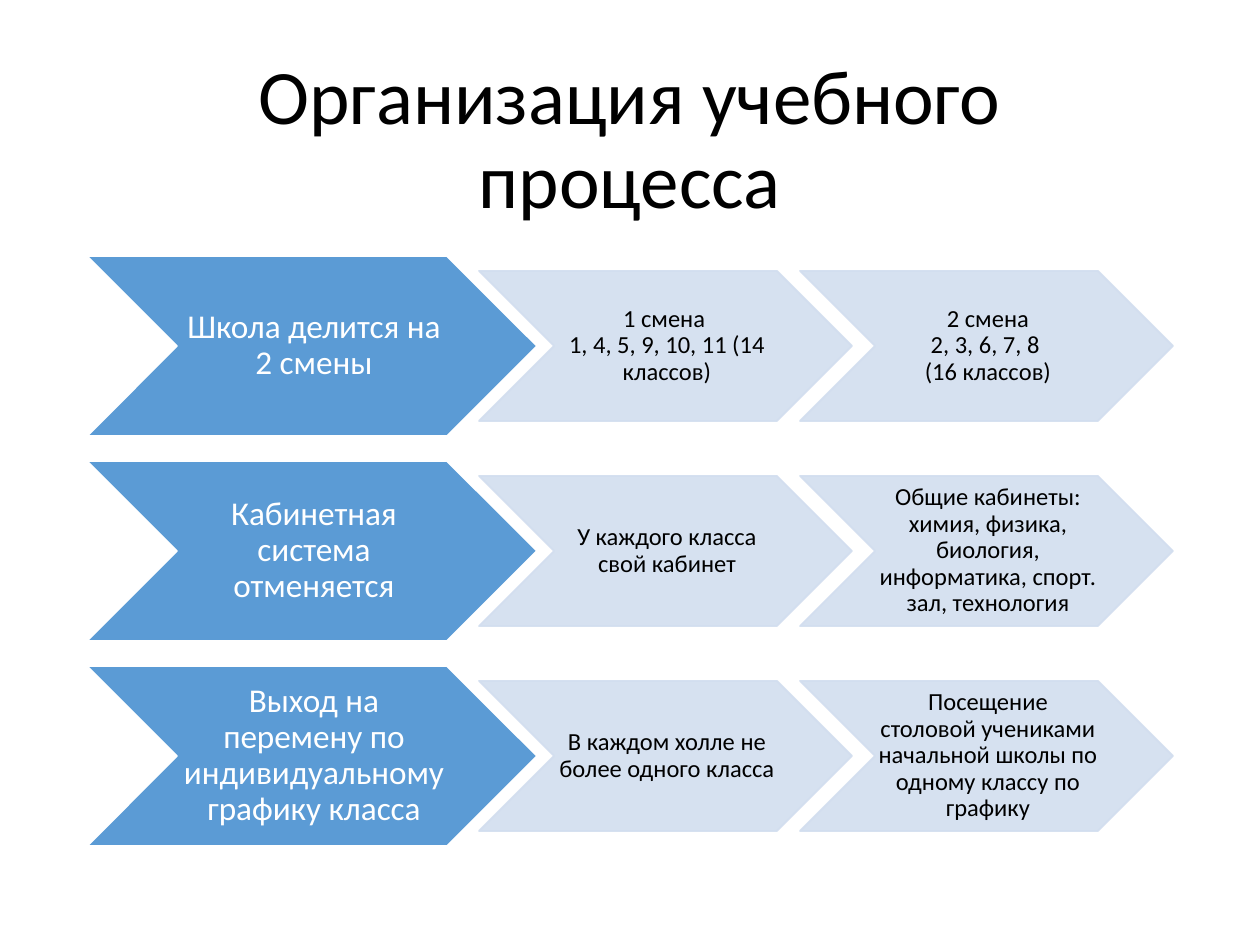
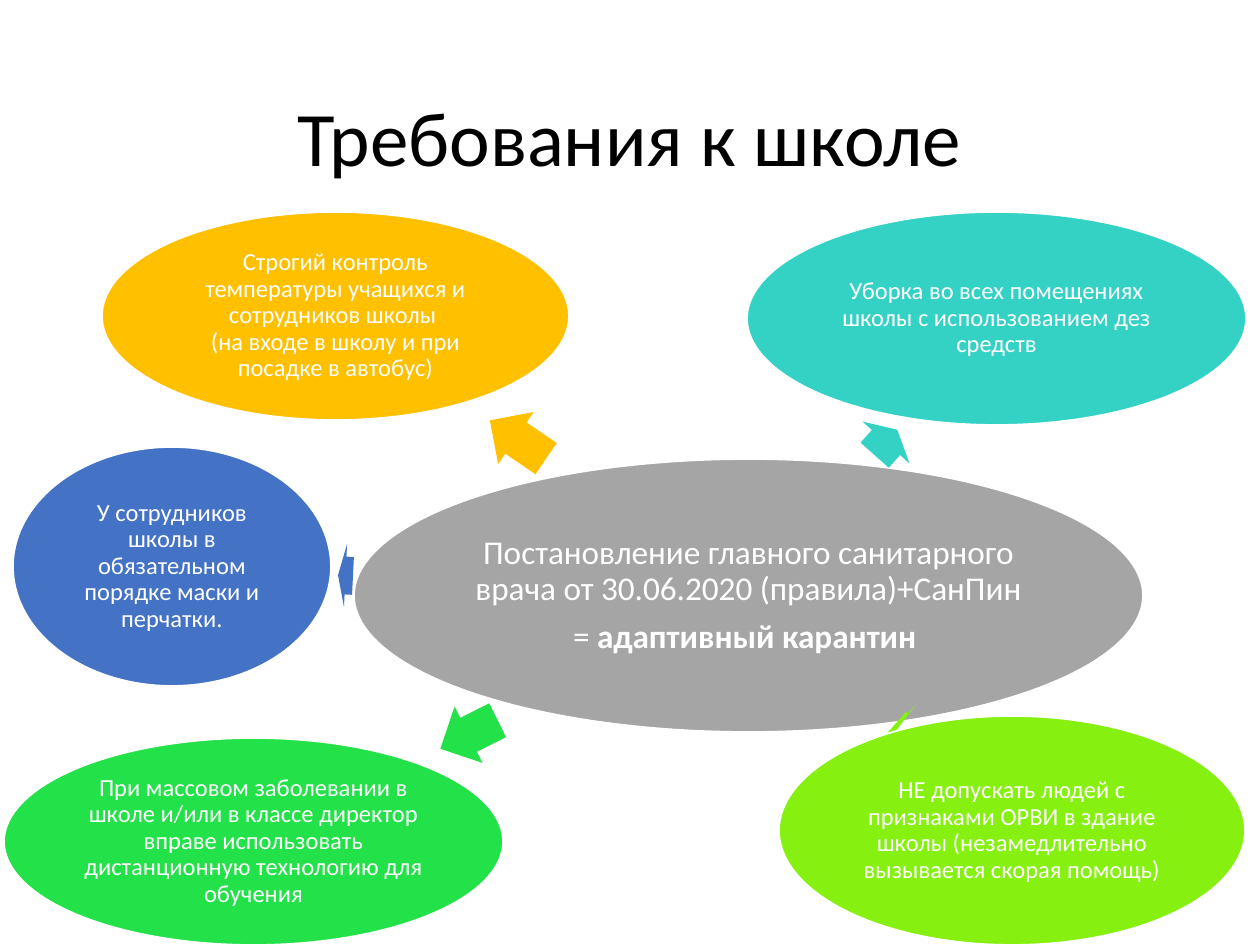
from lxml import etree
from pptx import Presentation
from pptx.dml.color import RGBColor
from pptx.enum.shapes import MSO_SHAPE
from pptx.enum.text import MSO_ANCHOR, PP_ALIGN
from pptx.oxml.ns import qn
from pptx.util import Emu, Pt

CHEVRON, OVAL, ARROW = MSO_SHAPE.CHEVRON, MSO_SHAPE.OVAL, MSO_SHAPE.RIGHT_ARROW
MIDDLE, CENTER = MSO_ANCHOR.MIDDLE, PP_ALIGN.CENTER

FONT = "Calibri"
BLACK, WHITE = "000000", "FFFFFF"
BLUE, PALE, GREY = "5B9BD5", "D2DEEF", "A5A5A5"
TITLE_SIZE, LARGE, SMALL = 44, 19, 14
TITLE_BOX = (87, 50, 1086, 183)
ARROW_H = 63

# Head of each row, then its two details; every text is a list of paragraphs
ROWS = [
    (["Школа делится на 2 смены"],
     ["1 смена ", "1, 4, 5, 9, 10, 11 (14 классов)"],
     ["2 смена", "2, 3, 6, 7, 8 ", "(16 классов)"]),
    (["Кабинетная система отменяется"],
     ["У каждого класса свой кабинет"],
     ["Общие кабинеты: химия, физика, биология, информатика, спорт. зал, технология"]),
    (["Выход на перемену по индивидуальному графику класса"],
     ["В каждом холле не более одного класса"],
     ["Посещение столовой учениками начальной школы по одному классу по графику"]),
]

# Colour, ellipse box, arrow (x, y, width, rotation), paragraphs
REQUIREMENTS = [
    ("FFC000", (102, 212, 467, 208), (484, 408, 68, 214.2),
     ["Строгий контроль температуры учащихся и сотрудников школы ",
      "(на входе в школу и при посадке в автобус)"]),
    ("86F011", (779, 716, 466, 229), (893, 696, 5, 41.6),
     ["НЕ допускать людей с признаками ОРВИ в здание школы "
      "(незамедлительно вызывается скорая помощь)"]),
    ("23E148", (4, 738, 499, 207), (437, 703, 64, 153.6),
     ["При массовом заболевании в школе и/или в классе директор вправе "
      "использовать дистанционную технологию для обучения"]),
    ("33D2C5", (747, 212, 499, 213), (869, 411, 34, 311.7),
     ["Уборка во всех помещениях школы с использованием дез средств"]),
    ("4472C4", (13, 447, 318, 239), (338, 544, 15, 182.8),
     ["У сотрудников школы в обязательном порядке маски и перчатки."]),
]


def px(n):
    return Emu(round(n * 914400 / 126))


def rgb(color):
    return RGBColor.from_string(color)


def set_alpha(fill_parent, percent):
    color = fill_parent.find(qn("a:solidFill"))[0]
    etree.SubElement(color, qn("a:alpha")).set("val", str(percent * 1000))


def add_shape(s, kind, box, fill, line=None, alpha=None):
    sp = s.shapes.add_shape(kind, *map(px, box))
    sp.shadow.inherit = False
    sp.fill.solid()
    sp.fill.fore_color.rgb = rgb(fill)
    if line:
        sp.line.color.rgb = rgb(line)
        sp.line.width = Pt(1)
    else:
        sp.line.fill.background()
    if alpha:
        spPr = sp.fill._xPr
        set_alpha(spPr, alpha)
        set_alpha(spPr.find(qn("a:ln")), alpha)
    return sp


def set_insets(tf, left, top, right, bottom):
    tf.margin_left, tf.margin_top = px(left), px(top)
    tf.margin_right, tf.margin_bottom = px(right), px(bottom)


def write(tf, paragraphs, size, color):
    """Fill a frame; a paragraph is a string or a list of (text, bold) runs."""
    tf.word_wrap = True
    tf.vertical_anchor = MIDDLE
    for i, content in enumerate(paragraphs):
        p = tf.add_paragraph() if i else tf.paragraphs[0]
        p.alignment = CENTER
        p.line_spacing = 0.9
        p.font.name, p.font.size = FONT, Pt(size)
        p.font.color.rgb = rgb(color)
        runs = [(content, None)] if isinstance(content, str) else content
        for text, bold in runs:
            r = p.add_run()
            r.text = text
            r.font.name, r.font.size = FONT, Pt(size)
            r.font.color.rgb = rgb(color)
            r.font.bold = bold


def add_title_slide(prs, title):
    s = prs.slides.add_slide(prs.slide_layouts[6])
    tb = s.shapes.add_textbox(*map(px, TITLE_BOX))
    write(tb.text_frame, [title], TITLE_SIZE, BLACK)
    return s


def add_chevron_row(s, x, y, head, details):
    # Row head
    sp = add_shape(s, CHEVRON, (x, y, 450, 180), BLUE, WHITE)
    set_insets(sp.text_frame, 4, 1, 0, 1)
    write(sp.text_frame, head, LARGE, WHITE)
    # Details to its right
    for i, paragraphs in enumerate(details):
        box = (x + 392 + i * 321, y + 15, 373, 150)
        sp = add_shape(s, CHEVRON, box, PALE, PALE, alpha=90)
        set_insets(sp.text_frame, 3, 1, 0, 1)
        write(sp.text_frame, paragraphs, SMALL, BLACK)


def add_ellipse(s, box, color, paragraphs, size, inset):
    sp = add_shape(s, OVAL, box, color, WHITE)
    set_insets(sp.text_frame, *[inset] * 4)
    write(sp.text_frame, paragraphs, size, WHITE)
    return sp


def add_requirement(s, color, box, arrow, paragraphs):
    x, y, w, rotation = arrow
    sp = add_shape(s, ARROW, (x, y, w, ARROW_H), color)
    sp.adjustments[0], sp.adjustments[1] = 0.6, 0.5
    sp.rotation = rotation
    add_ellipse(s, box, color, paragraphs, SMALL, 3)


def build_schedule(prs):
    s = add_title_slide(prs, "Организация учебного процесса")
    for i, (head, *details) in enumerate(ROWS):
        add_chevron_row(s, 87, 256 + i * 205, head, details)


def build_requirements(prs):
    s = add_title_slide(prs, "Требования к школе")
    # Central rule
    rule = ["Постановление главного санитарного врача от 30.06.2020 (правила)+СанПин",
            [("= ", None), ("адаптивный карантин ", True)]]
    hub = add_ellipse(s, (354, 459, 789, 273), GREY, rule, LARGE, 4)
    hub.text_frame.paragraphs[0].space_after = Pt(6.65)
    # Requirements around it
    for requirement in REQUIREMENTS:
        add_requirement(s, *requirement)


def main():
    prs = Presentation()
    prs.slide_width, prs.slide_height = px(1260), px(945)
    build_schedule(prs)
    build_requirements(prs)
    prs.save("out.pptx")


if __name__ == "__main__":
    main()
